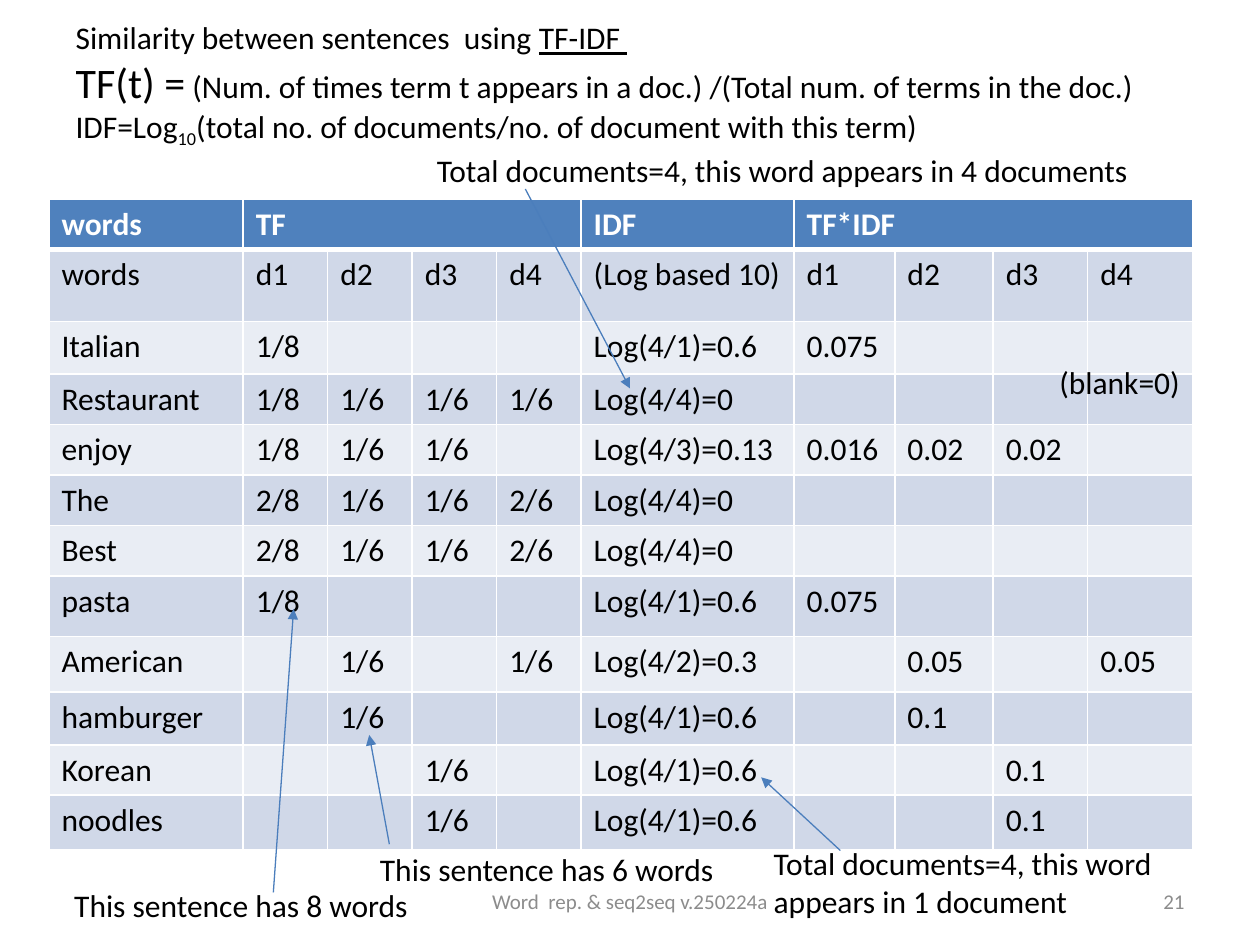
from dataclasses import dataclass

import lxml.etree
import pptx
import pptx.dml.color
import pptx.enum.shapes
import pptx.enum.text
import pptx.oxml.ns
import pptx.util

Pt = pptx.util.Pt
qn = pptx.oxml.ns.qn
ALIGN = pptx.enum.text.PP_ALIGN
ANCHOR = pptx.enum.text.MSO_ANCHOR

FONT = "Calibri"
COLORS = {
    "text": "000000",
    "footer": "8C8C8C",
    "arrow": "4B7EBC",
    "header": "4F81BD",
    "header_text": "FFFFFF",
    "border": "FFFFFF",
    "band_dark": "D0D8E8",
    "band_light": "E9EDF4",
}

COLUMN_WIDTHS = [111, 48.3, 48.3, 48.3, 48.3, 121.7, 57.6, 56.2, 54, 59.8]
ROW_HEIGHTS = [25.2, 41, 30.2, 27.4, 27.4, 27.4, 27.4, 34.6, 31.7, 30.2, 27.4, 31]
TFIDF_ROWS = [
    ["words", "TF", "", "", "", "IDF", "TF*IDF", "", "", ""],
    ["words", "d1", "d2", "d3", "d4", "(Log based 10)", "d1", "d2", "d3", "d4"],
    ["Italian", "1/8", "", "", "", "Log(4/1)=0.6", "0.075", "", "", ""],
    ["Restaurant", "1/8", "1/6", "1/6", "1/6", "Log(4/4)=0", "", "", "", ""],
    ["enjoy", "1/8", "1/6", "1/6", "", "Log(4/3)=0.13", "0.016", "0.02", "0.02", ""],
    ["The", "2/8", "1/6", "1/6", "2/6", "Log(4/4)=0", "", "", "", ""],
    ["Best", "2/8", "1/6", "1/6", "2/6", "Log(4/4)=0", "", "", "", ""],
    ["pasta", "1/8", "", "", "", "Log(4/1)=0.6", "0.075", "", "", ""],
    ["American", "", "1/6", "", "1/6", "Log(4/2)=0.3", "", "0.05", "", "0.05"],
    ["hamburger", "", "1/6", "", "", "Log(4/1)=0.6", "", "0.1", "", ""],
    ["Korean", "", "", "1/6", "", "Log(4/1)=0.6", "", "", "0.1", ""],
    ["noodles", "", "", "1/6", "", "Log(4/1)=0.6", "", "", "0.1", ""],
]


@dataclass
class Label:
    text: str
    left: float
    top: float
    width: float
    height: float = 29.1
    size: float = 18
    color: str = "text"
    align: ALIGN = ALIGN.LEFT
    anchor: ANCHOR = ANCHOR.TOP
    wrap: bool = False


@dataclass
class Arrow:
    start: tuple[float, float]
    end: tuple[float, float]


@dataclass
class Piece:
    """A stretch of the title with one format."""
    text: str
    size: float = 18
    underline: bool = False
    subscript: bool = False


TITLE_LINES = [
    [Piece("Similarity between sentences  using "), Piece("TF-IDF ", underline=True)],
    [Piece("TF(t) =", size=24),
     Piece(" (Num. of times term t appears in a doc.) /(Total num. of terms in the doc.)")],
    [Piece("IDF=Log"), Piece("10", subscript=True),
     Piece("(total no. of documents/no. of document with this term)")],
]
FOOTERS = [
    Label("Word  rep. & seq2seq v.250224a", 246, 500.5, 228, 28.8, 12, "footer",
          ALIGN.CENTER, ANCHOR.MIDDLE, True),
    Label("21", 516, 500.5, 168, 28.8, 12, "footer", ALIGN.RIGHT, ANCHOR.MIDDLE, True),
]
NOTES = [
    (Label("This sentence has 8 words", 35.3, 502.5, 207.4),
     Arrow((156.2, 510), (167.8, 348))),
    (Label("This sentence has 6 words", 210, 482.4, 207.4),
     Arrow((222.5, 482.4), (211, 420))),
    (Label("Total documents=4, this word appears in 4 documents", 242.6, 82.8, 413.3),
     Arrow((300.2, 108), (360, 222))),
    (Label("Total documents=4, this word appears in 1 document", 435, 478.8, 231, 51.1,
           wrap=True),
     Arrow((480.2, 486), (435, 444.2))),
]
BLANK_NOTE = Label("(blank=0)", 598.3, 203.8, 84.2, 51.1)


def rgb(name: str) -> pptx.dml.color.RGBColor:
    return pptx.dml.color.RGBColor.from_string(COLORS[name])


def format_run(run, size: float = 18, color: str = "text", bold: bool = False) -> None:
    run.font.name = FONT
    run.font.size = Pt(size)
    run.font.bold = bold
    run.font.color.rgb = rgb(color)


def fill_title(title) -> None:
    title.left, title.top, title.width, title.height = Pt(36), Pt(8), Pt(678), Pt(80)
    frame = title.text_frame
    frame.auto_size = pptx.enum.text.MSO_AUTO_SIZE.NONE
    frame.word_wrap = True
    frame.vertical_anchor = ANCHOR.MIDDLE
    for index, line in enumerate(TITLE_LINES):
        paragraph = frame.add_paragraph() if index else frame.paragraphs[0]
        paragraph.alignment = ALIGN.LEFT
        for piece in line:
            run = paragraph.add_run()
            run.text = piece.text
            format_run(run, piece.size)
            run.font.underline = piece.underline
            if piece.subscript:
                run.font._element.set("baseline", "-25000")


def add_label(slide, label: Label) -> None:
    box = slide.shapes.add_textbox(
        Pt(label.left), Pt(label.top), Pt(label.width), Pt(label.height))
    frame = box.text_frame
    frame.word_wrap = label.wrap
    frame.vertical_anchor = label.anchor
    frame.text = label.text
    frame.paragraphs[0].alignment = label.align
    format_run(frame.paragraphs[0].runs[0], label.size, label.color)


def add_arrow(slide, arrow: Arrow) -> None:
    connector = slide.shapes.add_connector(
        pptx.enum.shapes.MSO_CONNECTOR.STRAIGHT,
        *(Pt(value) for value in arrow.start + arrow.end))
    connector.line.color.rgb = rgb("arrow")
    connector.line.width = Pt(0.75)
    lxml.etree.SubElement(connector.line._get_or_add_ln(), qn("a:tailEnd"), type="triangle")
    lxml.etree.SubElement(connector._element.spPr, qn("a:effectLst"))


def add_borders(cell, bottom: float) -> None:
    properties = cell._tc.get_or_add_tcPr()
    for side, width in (("L", 1), ("R", 1), ("T", 1), ("B", bottom)):
        line = lxml.etree.SubElement(properties, qn(f"a:ln{side}"), w=str(Pt(width)))
        fill = lxml.etree.SubElement(line, qn("a:solidFill"))
        lxml.etree.SubElement(fill, qn("a:srgbClr"), val=COLORS["border"])


def add_tfidf_table(slide) -> None:
    table = slide.shapes.add_table(
        len(ROW_HEIGHTS), len(COLUMN_WIDTHS), Pt(28), Pt(113.8),
        Pt(sum(COLUMN_WIDTHS)), Pt(sum(ROW_HEIGHTS))).table
    for column, width in zip(table.columns, COLUMN_WIDTHS):
        column.width = Pt(width)
    for row, height in zip(table.rows, ROW_HEIGHTS):
        row.height = Pt(height)
    for first in (1, 6):
        table.cell(0, first).merge(table.cell(0, first + 3))
    for r, values in enumerate(TFIDF_ROWS):
        is_header = r == 0
        band = "header" if is_header else "band_dark" if r % 2 else "band_light"
        for c, value in enumerate(values):
            cell = table.cell(r, c)
            add_borders(cell, bottom=3 if is_header else 1)
            cell.fill.solid()
            cell.fill.fore_color.rgb = rgb(band)
            if value:
                cell.text_frame.text = value
                format_run(cell.text_frame.paragraphs[0].runs[0],
                           color="header_text" if is_header else "text", bold=is_header)


def main() -> None:
    deck = pptx.Presentation()
    deck.slide_width, deck.slide_height = Pt(720), Pt(540)
    slide = deck.slides.add_slide(deck.slide_layouts[5])
    fill_title(slide.shapes.title)
    for footer in FOOTERS:
        add_label(slide, footer)
    add_tfidf_table(slide)
    for label, arrow in NOTES:
        add_label(slide, label)
        add_arrow(slide, arrow)
    add_label(slide, BLANK_NOTE)
    deck.save("out.pptx")


if __name__ == "__main__":
    main()
